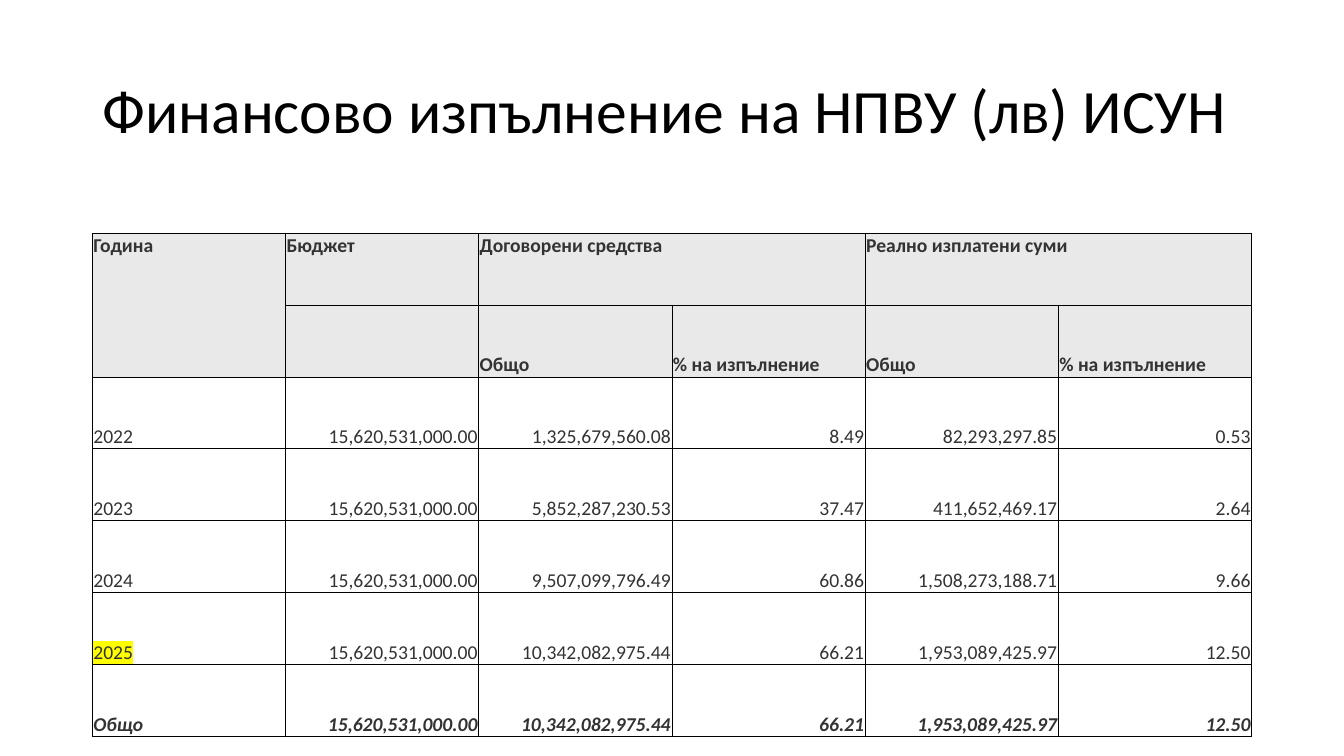
from lxml import etree
from pptx import Presentation
from pptx.dml.color import RGBColor
from pptx.enum import text as t
from pptx.oxml import parse_xml
from pptx.oxml.ns import nsdecls, qn
from pptx.util import Pt

BLACK = RGBColor(0, 0, 0)
INK = RGBColor(0x33, 0x33, 0x33)
GREY = RGBColor(0xE9, 0xE9, 0xE9)
WHITE = RGBColor(255, 255, 255)
YELLOW = RGBColor(255, 255, 0)
FONT = "Calibri"
BUDGET = "15,620,531,000.00"
SHARE = "% на изпълнение"

ROWS = [
    ["", "", "", "", "", ""],
    ["Година", "Бюджет", "Договорени средства", "", "Реално изплатени суми", ""],
    ["", "", "Общо", SHARE, "Общо", SHARE],
    ["2022", BUDGET, "1,325,679,560.08", "8.49", "82,293,297.85", "0.53"],
    ["2023", BUDGET, "5,852,287,230.53", "37.47", "411,652,469.17", "2.64"],
    ["2024", BUDGET, "9,507,099,796.49", "60.86", "1,508,273,188.71", "9.66"],
    ["2025", BUDGET, "10,342,082,975.44", "66.21", "1,953,089,425.97", "12.50"],
    ["Общо", BUDGET, "10,342,082,975.44", "66.21", "1,953,089,425.97", "12.50"],
]
LAST = len(ROWS) - 1
MERGES = [(0, 0, 0, 5), (1, 0, 2, 0), (1, 2, 1, 3), (1, 4, 1, 5)]


def border(cell, sides):
    """Give the cell thin black lines on the sides named by L, R, T, B."""
    for side in sides:
        cell._tc.get_or_add_tcPr().append(parse_xml(
            f'<a:ln{side} {nsdecls("a")} w="{Pt(0.5)}"><a:solidFill>'
            f'<a:srgbClr val="{BLACK}"/></a:solidFill></a:ln{side}>'))


prs = Presentation()
prs.slide_width, prs.slide_height = Pt(960), Pt(540)
slide = prs.slides.add_slide(prs.slide_layouts[5])

title = slide.shapes.title
title.left, title.top, title.width, title.height = Pt(66), Pt(28.75), Pt(828), Pt(104.4)
frame = title.text_frame
frame.text = "Финансово изпълнение на НПВУ (лв) ИСУН"
frame.vertical_anchor = t.MSO_ANCHOR.MIDDLE
frame.auto_size = t.MSO_AUTO_SIZE.NONE
head = frame.paragraphs[0]
head.alignment = t.PP_ALIGN.LEFT
head.line_spacing = 0.9
font = head.runs[0].font
font.name, font.size, font.color.rgb = FONT, Pt(44), BLACK

table = slide.shapes.add_table(len(ROWS), 6, Pt(66), Pt(115), Pt(828), Pt(411.2)).table
table.first_row = table.horz_banding = False
for row in table.rows:
    row.height = Pt(51.4)
for top, left, bottom, right in MERGES:
    table.cell(top, left).merge(table.cell(bottom, right))

for r, row in enumerate(ROWS):
    for c, words in enumerate(row):
        cell = table.cell(r, c)
        border(cell, "LRTB" if r else "B")
        if r == 0:
            cell.fill.background()
            continue
        cell.fill.solid()
        cell.fill.fore_color.rgb = GREY if r < 3 else WHITE
        cell.margin_left = cell.margin_right = cell.margin_top = Pt(0.7)
        cell.margin_bottom = 0
        cell.vertical_anchor = t.MSO_ANCHOR.BOTTOM if r > 1 else t.MSO_ANCHOR.TOP
        if not words:
            continue
        cell.text_frame.text = words
        para = cell.text_frame.paragraphs[0]
        para.alignment = t.PP_ALIGN.RIGHT if r > 2 and c else t.PP_ALIGN.LEFT
        font = para.runs[0].font
        font.name, font.size, font.color.rgb = FONT, Pt(14), INK
        font.bold = r < 3 or r == LAST
        font.italic = r == LAST

# The current year is marked
props = table.cell(6, 0).text_frame.paragraphs[0].runs[0].font._element
mark = etree.Element(qn("a:highlight"))
etree.SubElement(mark, qn("a:srgbClr")).set("val", str(YELLOW))
props.find(qn("a:solidFill")).addnext(mark)

prs.save("out.pptx")
